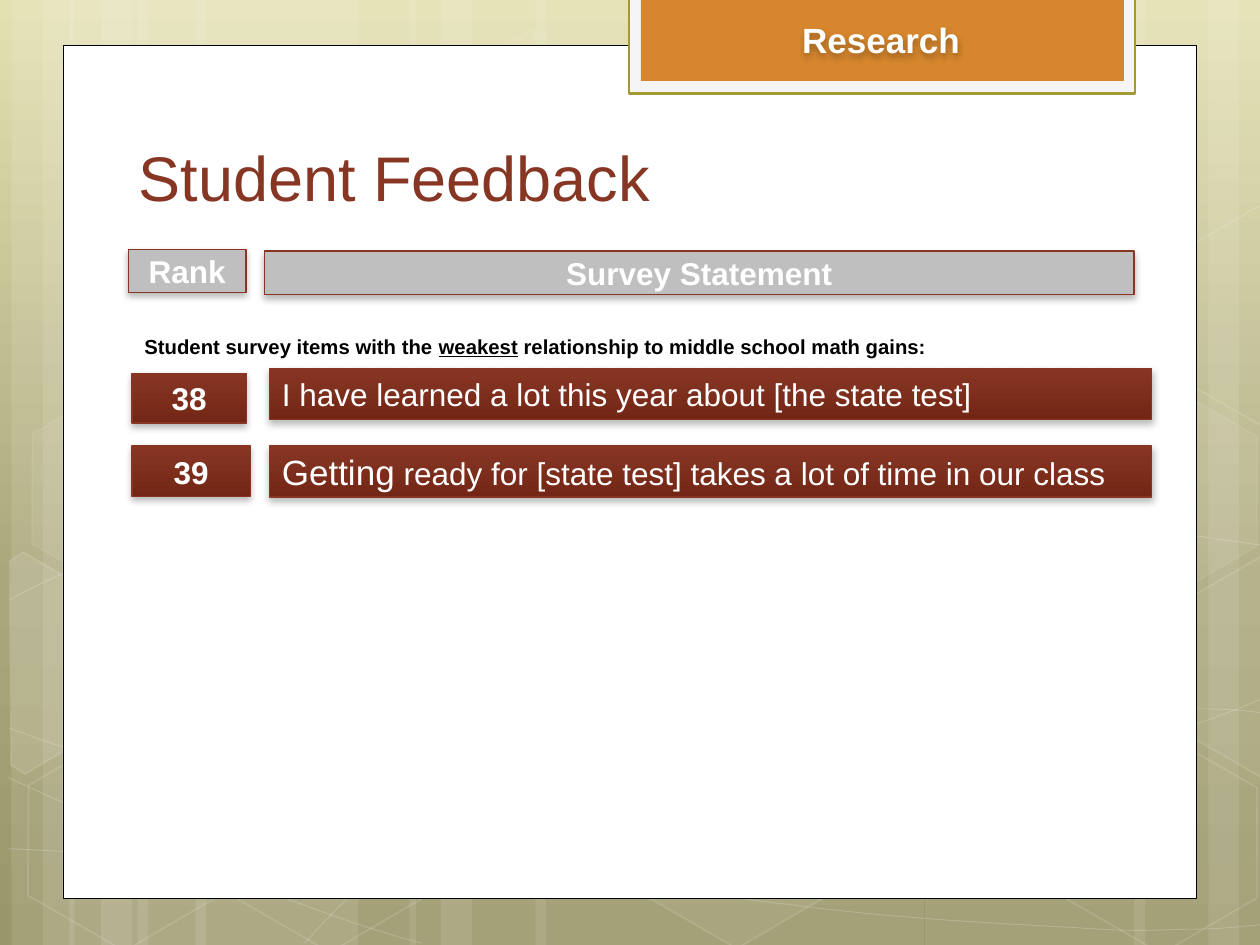
from copy import deepcopy
from math import cos, radians, sin

from lxml.etree import SubElement
from pptx import Presentation
from pptx.dml.color import RGBColor
from pptx.enum.shapes import MSO_SHAPE as SHAPE
from pptx.enum.text import MSO_ANCHOR as ANCHOR, MSO_AUTO_SIZE as AUTO, PP_ALIGN as ALIGN
from pptx.oxml.ns import qn
from pptx.util import Pt

WHITE, GREY, RUST = "FFFFFF", "BFBFBF", "873624"
RUST_GRADIENT = [(0, RUST), (1, "732615")]
SKY = [(0, "E4E0B2"), (0.62, "ABA77B"), (1, "9A9669")]
TILT = 30

BARS = [(78.5, 126), (6.5, 36), (24.5, 60), (111.6, 126), (39.6, 36), (57.6, 60),
        (528.5, 126), (690.5, 36), (648, 60), (306, 222), (234, 36), (252, 60)]
HEXAGONS = [(240.5, 26, 4, 8), (357.8, 424.1, 6, 12), (7.9, 425.5, 0, 12),
            (10.1, 224.6, 7, 8), (125.3, 426.2, 0, 12), (542.2, 326.2, 10, 12),
            (600.5, 427, 0, 12), (600.5, 226.1, 7, 8)]
LEFT_HEXAGON = [(5.8, 320.4), (13.7, 315.4), (69.1, 347.8), (68.4, 410.4),
                (14.4, 442.1), (6.5, 437)]
RIGHT_HEXAGON = [(666.7, 349.2), (721.4, 317.5), (726.5, 321.1), (726.5, 441.4),
                 (721.4, 444.2), (666.7, 412.6)]
CURVES = [
    [(5, 485), (44, 487), (83, 489), (137, 488), (191, 487), (258, 486), (330, 479),
     (402, 472), (504, 458), (570, 444), (636, 431), (703, 409), (725, 397)],
    [(5, 343), (26, 332), (47, 321), (87, 310), (128, 299), (186, 284), (250, 279),
     (314, 274), (392, 273), (471, 279), (550, 284), (682, 307), (725, 312)],
    [(4.3, 444.2), (91, 484), (178, 523), (241, 539)],
    [(5, 416), (27, 424), (50, 432), (92, 444), (134, 454), (197, 472), (257, 485),
     (317, 497), (392, 510), (452, 517), (512, 525), (576, 528), (614, 530),
     (652, 533), (662, 531), (680, 531), (699, 531), (712, 529), (725, 528)],
    [(174, 539), (187, 525), (200, 510), (217, 498), (235, 484), (259, 470), (279, 460),
     (300, 450), (312, 446), (338, 438), (364, 431), (413, 421), (438, 416),
     (464, 411), (467, 411), (490, 410), (512, 408), (547, 405), (572, 405),
     (597, 404), (638, 405), (638, 405), (654, 405), (670, 405), (686, 405),
     (699, 405), (711, 406), (718, 407), (724, 408), (722, 407), (724, 408)],
]


def rgb(value):
    """Return the colour for a hex string."""
    return RGBColor.from_string(value)


def set_alpha(parent, percent):
    """Make the solid fill under an element partly transparent."""
    color = parent.find(qn("a:solidFill"))[0]
    SubElement(color, qn("a:alpha")).set("val", str(percent * 1000))


def set_gradient(fill, element, stops):
    """Give a fill a top-to-bottom gradient."""
    fill.gradient()
    fill.gradient_angle = 270
    gs_list = element.find(".//" + qn("a:gsLst"))
    while len(gs_list) < len(stops):
        gs_list.append(deepcopy(gs_list[0]))
    for stop, (position, color) in zip(fill.gradient_stops, stops):
        stop.position, stop.color.rgb = position, rgb(color)


def add_shadow(sp):
    """Add a soft shadow that falls downwards."""
    sp.shadow.inherit = False
    effects = sp.element.spPr.find(qn("a:effectLst"))
    shadow = SubElement(effects, qn("a:outerShdw"), blurRad=str(Pt(4)), dist=str(Pt(2)),
                        dir="5400000", rotWithShape="0")
    color = SubElement(shadow, qn("a:srgbClr"), val="000000")
    SubElement(color, qn("a:alpha"), val="28000")


def style(sp, fill=None, line=None, width=0.75, fill_alpha=100, line_alpha=100):
    """Set the fill and outline of a shape."""
    sp.shadow.inherit = False
    if isinstance(fill, list):
        set_gradient(sp.fill, sp.element, fill)
    elif fill and fill_alpha:
        sp.fill.solid()
        sp.fill.fore_color.rgb = rgb(fill)
        if fill_alpha < 100:
            set_alpha(sp.element.spPr, fill_alpha)
    else:
        sp.fill.background()
    if line:
        sp.line.color.rgb = rgb(line)
        sp.line.width = Pt(width)
        if line_alpha < 100:
            set_alpha(sp.element.spPr.find(qn("a:ln")), line_alpha)
    else:
        sp.line.fill.background()
    return sp


def add_box(s, box, kind=SHAPE.RECTANGLE, **look):
    """Add a styled preset shape."""
    return style(s.shapes.add_shape(kind, *map(Pt, box)), **look)


def add_outline(s, points, close, **look):
    """Add a styled freeform through the points."""
    (x, y), *rest = [(Pt(px), Pt(py)) for px, py in points]
    builder = s.shapes.build_freeform(x, y)
    builder.add_line_segments(rest, close=close)
    return style(builder.convert_to_shape(), **look)


def add_curve(s, controls, **look):
    """Add an open chain of cubic curves."""
    outline = add_outline(s, controls, False, **look).element.find(".//" + qn("a:path"))
    lines = outline.findall(qn("a:lnTo"))
    for i in range(0, len(lines), 3):
        cubic = SubElement(outline, qn("a:cubicBezTo"))
        for line in lines[i:i + 3]:
            cubic.append(line[0])
            outline.remove(line)


def add_tilted(s, points, center, **look):
    """Add a closed outline held upright and turned about its centre."""
    (cx, cy), c, n = center, cos(radians(TILT)), sin(radians(TILT))
    upright = [(cx + (x - cx) * c + (y - cy) * n, cy - (x - cx) * n + (y - cy) * c)
               for x, y in points]
    add_outline(s, upright, True, **look).rotation = TILT


def add_text(p, text, size=18, color=WHITE, bold=False, underline=False, baseline=0):
    """Add a formatted run to a paragraph."""
    r = p.add_run()
    r.text = text
    r.font.name, r.font.size, r.font.bold = "Arial", Pt(size), bold
    r.font.color.rgb = rgb(color)
    if underline:
        r.font.underline = True
    if baseline:
        r._r.get_or_add_rPr().set("baseline", str(baseline * 1000))


def first_paragraph(sp, align=ALIGN.LEFT, anchor=ANCHOR.MIDDLE):
    """Prepare a shape's text frame and return its first paragraph."""
    tf = sp.text_frame
    tf.word_wrap, tf.auto_size, tf.vertical_anchor = True, AUTO.NONE, anchor
    tf.paragraphs[0].alignment = align
    return tf.paragraphs[0]


def backdrop(s, height):
    """Draw the gradient, stripes, curves and hexagons behind the page."""
    set_gradient(s.background.fill, s.element, SKY)
    for x, width in BARS:
        add_box(s, (x, 0, width, height), fill=WHITE, fill_alpha=10)
    for controls in CURVES:
        add_curve(s, controls, line=WHITE, width=0.5, line_alpha=20)
    for x, y, fill_alpha, line_alpha in HEXAGONS:
        sp = add_box(s, (x, y, 126, 109.4), SHAPE.HEXAGON, fill=WHITE, line=WHITE, width=1,
                     fill_alpha=fill_alpha, line_alpha=line_alpha)
        sp.adjustments[0], sp.adjustments[1] = 0.285, 1.155
        sp.rotation = TILT
    upper_hexagon = [(x, y - 200.9) for x, y in RIGHT_HEXAGON]
    for points, center, alpha in ((LEFT_HEXAGON, (25.9, 385.9), 10),
                                  (RIGHT_HEXAGON, (709.2, 374.4), 4),
                                  (upper_hexagon, (709.2, 173.5), 0)):
        add_tilted(s, points, center, fill=WHITE, line=WHITE, width=1,
                   fill_alpha=alpha, line_alpha=12)


def section_tab(s, x, y, w, h, label):
    """Draw the framed tab and its label."""
    add_box(s, (x, y, w, h), fill="F5F5F5", line="A39A36", width=1.25)
    add_box(s, (x + 7, y - 1.5, w - 13.5, h - 5.8), fill="D6862D")
    sp = s.shapes.add_textbox(Pt(x + 14), Pt(y + 8.5), Pt(w - 29), Pt(32))
    add_shadow(sp)
    add_text(first_paragraph(sp, ALIGN.CENTER, ANCHOR.TOP), label, size=20, bold=True)


def label_box(s, box, fill, runs, align=ALIGN.CENTER, bold=False):
    """Draw one shadowed box of the ranking."""
    sp = add_box(s, box, fill=fill, line=RUST)
    add_shadow(sp)
    p = first_paragraph(sp, align)
    for text, size in runs:
        add_text(p, text, size=size, bold=bold)


def ranking(s, x, y):
    """Draw the header, caption and ranked statements."""
    label_box(s, (x + 77.6, y + 1, 497, 25), GREY, [("Survey Statement", 18)], bold=True)
    label_box(s, (x, y, 67.2, 24.7), GREY, [("Rank", 18)], bold=True)
    rows = [
        ("38", (x + 2, y + 71, 65.3, 28.3), y + 68,
         [("I have learned a lot this year about [the state test]", 18)]),
        ("39", (x + 2, y + 112.3, 67.6, 29.1), y + 112.3,
         [("Getting", 20), (" ready for [state test] takes a lot of time in our class", 18)]),
    ]
    for rank, rank_box, top, runs in rows:
        label_box(s, rank_box, RUST_GRADIENT, [(rank, 18)], bold=True)
        label_box(s, (x + 80.6, top, 504, 29.2), RUST_GRADIENT, runs, align=ALIGN.LEFT)
    sp = s.shapes.add_textbox(Pt(x + 2), Pt(y + 31.4), Pt(644), Pt(24))
    p = first_paragraph(sp, anchor=ANCHOR.TOP)
    for text, underline in (("Student survey items with the ", False), ("weakest", True),
                            (" relationship to middle school math gains:", False)):
        add_text(p, text, size=20, color="000000", bold=True, underline=underline, baseline=-25)


def slide_title(s, x, y, w, h, text):
    """Place the title placeholder in front."""
    title = s.shapes.title
    title.left, title.top, title.width, title.height = map(Pt, (x, y, w, h))
    add_text(first_paragraph(title, anchor=ANCHOR.BOTTOM), text, size=36, color=RUST)
    title.element.getparent().append(title.element)


prs = Presentation()
prs.slide_width, prs.slide_height = Pt(720), Pt(540)
s = prs.slides.add_slide(prs.slide_layouts[5])
backdrop(s, 540)
add_box(s, (36, 26, 648, 487.5), fill=WHITE, line="000000", width=0.5)
section_tab(s, 359.2, -1.5, 289.5, 55, "Research")
ranking(s, 73.4, 142.5)
slide_title(s, 72, 78.5, 648, 47.5, "Student Feedback")
prs.save("out.pptx")
